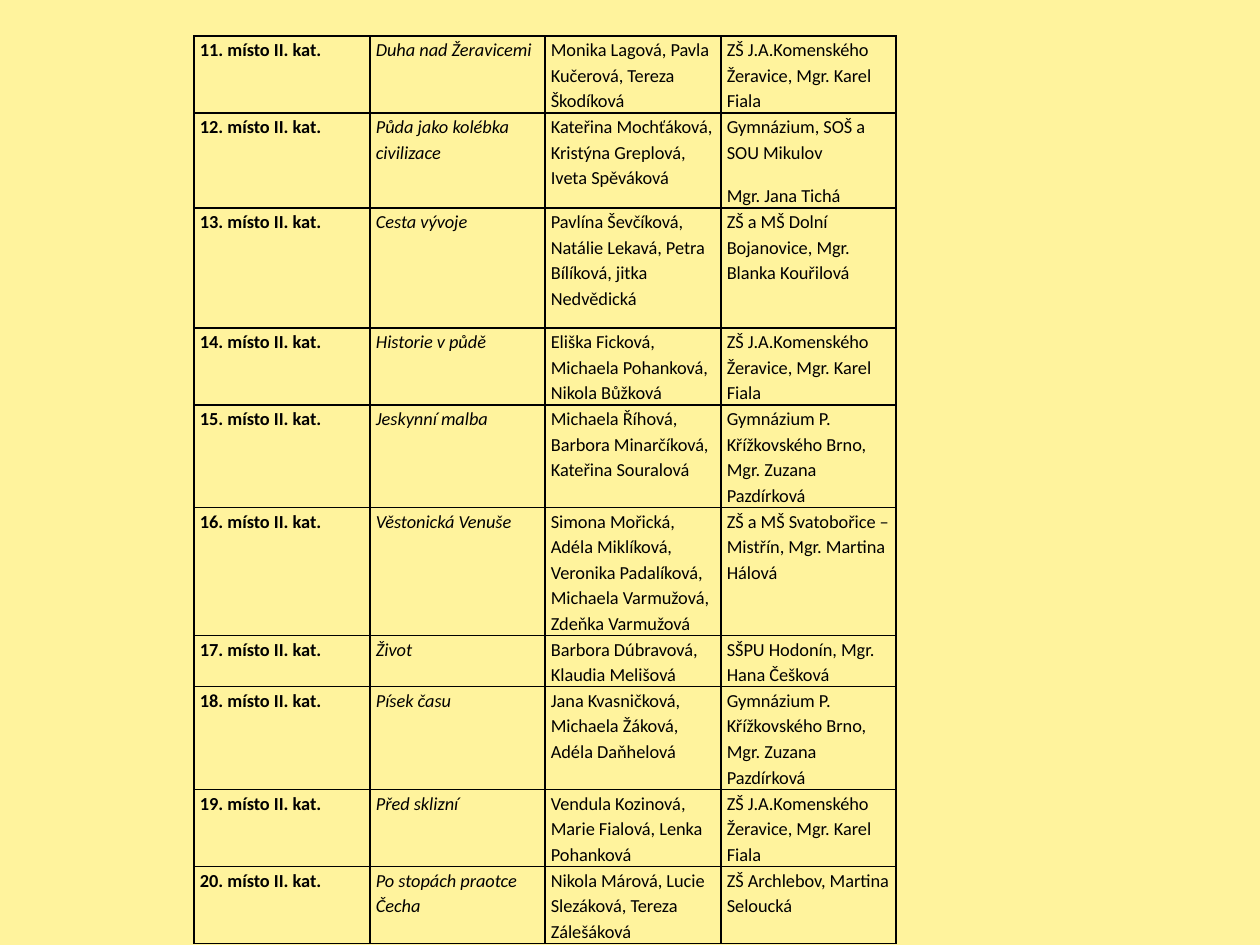
from lxml.etree import SubElement
from pptx import Presentation
from pptx.dml.color import RGBColor
from pptx.oxml.ns import qn
from pptx.util import Emu, Pt

ROW_HEIGHTS = [76, 95, 120, 77, 102, 128, 51, 103, 77, 76]
COL_WIDTHS = [176, 175, 176, 175]
FIRST_PLACE = 11

KOMENSKY = "ZŠ J.A.Komenského Žeravice, Mgr. Karel Fiala"
KRIZKOVSKY = "Gymnázium P. Křížkovského Brno, Mgr. Zuzana Pazdírková"
ENTRIES = [
    ("Duha nad Žeravicemi", "Monika Lagová, Pavla Kučerová, Tereza Škodíková", KOMENSKY),
    ("Půda jako kolébka civilizace",
     "Kateřina Mochťáková, Kristýna Greplová, Iveta Spěváková",
     "Gymnázium, SOŠ a SOU Mikulov\nMgr. Jana Tichá"),
    ("Cesta vývoje",
     "Pavlína Ševčíková, Natálie Lekavá, Petra Bílíková, jitka Nedvědická",
     "ZŠ a MŠ Dolní Bojanovice, Mgr. Blanka Kouřilová"),
    ("Historie v půdě", "Eliška Ficková, Michaela Pohanková, Nikola Bůžková", KOMENSKY),
    ("Jeskynní malba", "Michaela Říhová, Barbora Minarčíková, Kateřina Souralová", KRIZKOVSKY),
    ("Věstonická Venuše",
     "Simona Mořická, Adéla Miklíková, Veronika Padalíková, Michaela Varmužová, Zdeňka Varmužová",
     "ZŠ a MŠ Svatobořice – Mistřín, Mgr. Martina Hálová"),
    ("Život", "Barbora Dúbravová, Klaudia Melišová", "SŠPU Hodonín, Mgr. Hana Češková"),
    ("Písek času", "Jana Kvasničková, Michaela Žáková, Adéla Daňhelová", KRIZKOVSKY),
    ("Před sklizní", "Vendula Kozinová, Marie Fialová, Lenka Pohanková", KOMENSKY),
    ("Po stopách praotce Čecha",
     "Nikola Márová, Lucie Slezáková, Tereza Zálešáková",
     "ZŠ Archlebov, Martina Seloucká"),
]


def px(n):
    return Emu(round(n * 914400 / 126))


def color(value):
    return RGBColor.from_string(value)


class Deck:
    font = "Calibri"
    size = Pt(10.5)
    ink = "000000"
    paper = "FFF39D"

    def __init__(self, prs):
        self.s = prs.slides.add_slide(prs.slide_layouts[6])
        fill = self.s.background.fill
        fill.solid()
        fill.fore_color.rgb = color(self.paper)

    def borders(self, cell):
        tc_pr = cell._tc.get_or_add_tcPr()
        for side in ("lnL", "lnR", "lnT", "lnB"):
            ln = SubElement(tc_pr, qn(f"a:{side}"), w=str(Pt(1)))
            SubElement(SubElement(ln, qn("a:solidFill")), qn("a:srgbClr"), val=self.ink)

    def cell(self, cell, text, bold, italic):
        self.borders(cell)
        cell.fill.background()
        cell.margin_left = cell.margin_right = px(6)
        cell.margin_top = cell.margin_bottom = 0
        tf = cell.text_frame
        for i, line in enumerate(text.split("\n")):
            p = tf.add_paragraph() if i else tf.paragraphs[0]
            p.line_spacing = 1.15
            p.space_after = Pt(10)
            r = p.add_run()
            r.text = line
            r.font.name = self.font
            r.font.size = self.size
            r.font.bold = bold
            r.font.italic = italic
            r.font.color.rgb = color(self.ink)

    def table(self, x, y, widths, heights, rows):
        frame = self.s.shapes.add_table(
            len(heights), len(widths), px(x), px(y), px(sum(widths)), px(sum(heights)))
        tbl = frame.table
        tbl.first_row = tbl.horz_banding = False
        for col, width in zip(tbl.columns, widths):
            col.width = px(width)
        for row, height, texts in zip(tbl.rows, heights, rows):
            row.height = px(height)
            for c, text in enumerate(texts):
                self.cell(row.cells[c], text, bold=c == 0, italic=c == 1)


def main():
    prs = Presentation()
    prs.slide_width, prs.slide_height = px(1260), px(945)
    rows = [(f"{place}. místo II. kat.", *entry)
            for place, entry in enumerate(ENTRIES, FIRST_PLACE)]
    Deck(prs).table(194, 36, COL_WIDTHS, ROW_HEIGHTS, rows)
    prs.save("out.pptx")


if __name__ == "__main__":
    main()
